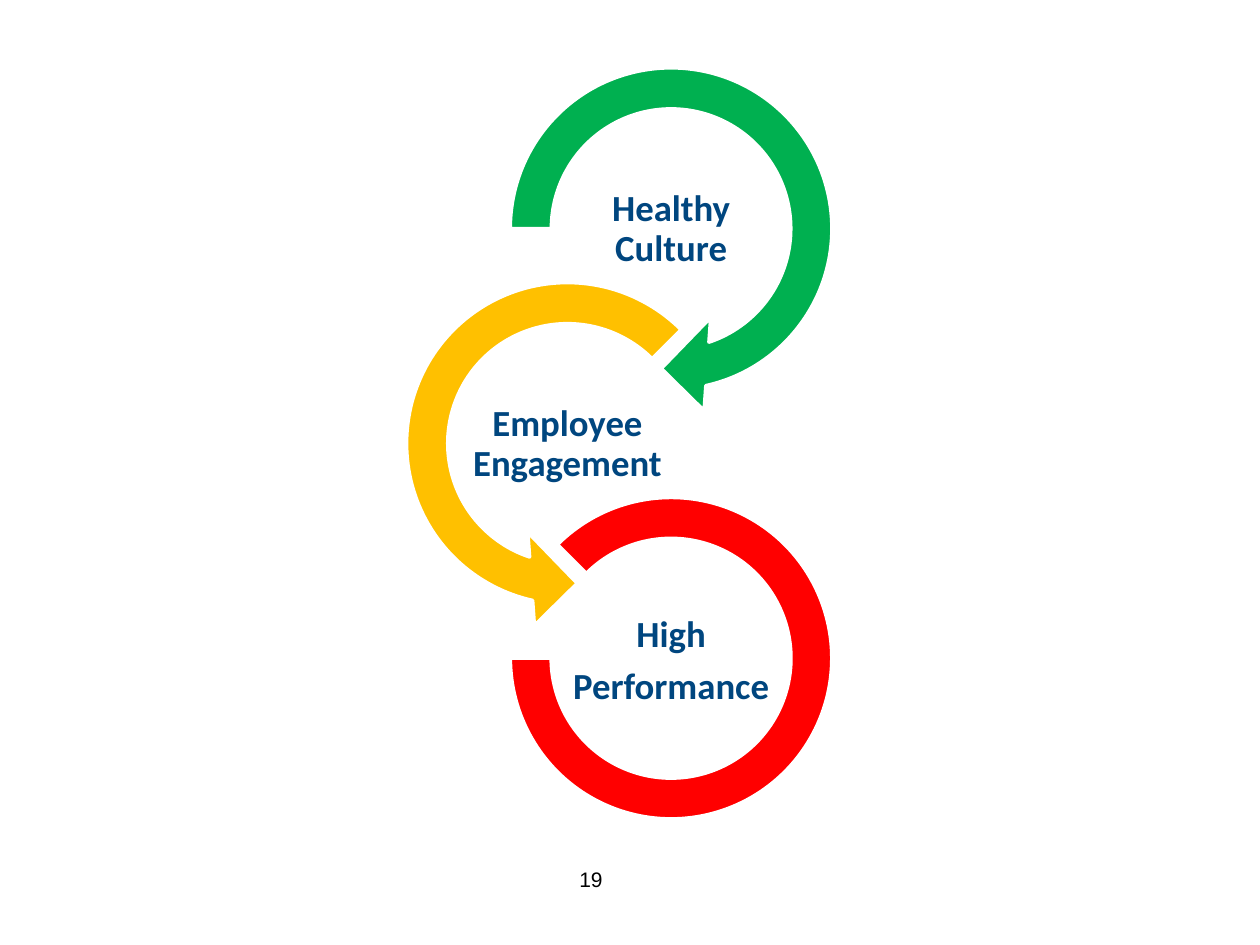
from pptx import Presentation
from pptx.dml.color import RGBColor
from pptx.enum.shapes import MSO_SHAPE
from pptx.enum.text import MSO_ANCHOR, PP_ALIGN
from pptx.util import Cm, Pt

RIGHT_ARROW = MSO_SHAPE.CIRCULAR_ARROW
LEFT_ARROW = MSO_SHAPE.LEFT_CIRCULAR_ARROW
ARC = MSO_SHAPE.BLOCK_ARC
MIDDLE = MSO_ANCHOR.MIDDLE
CENTER = PP_ALIGN.CENTER

GREEN = RGBColor(0x00, 0xB0, 0x50)
AMBER = RGBColor(0xFF, 0xC0, 0x00)
RED = RGBColor(0xFF, 0x00, 0x00)
NAVY = RGBColor(0x00, 0x46, 0x7F)
WHITE = RGBColor(0xFF, 0xFF, 0xFF)
BLACK = RGBColor(0x00, 0x00, 0x00)

ARROW_SIZE, ARC_SIZE = 7.54, 6.48
LABEL_WIDTH, LABEL_HEIGHT = 4.19, 2.08
STAGE_STEP = 4.33
STAGGER = 2.09

# preset, diameter, adjustments, colour, shift left, label drop, label paragraphs
STAGES = [
    (RIGHT_ARROW, ARROW_SIZE, (0.11, 11.42, 45, 108, 0.125), GREEN,
     0, 0.02, ["Healthy Culture"]),
    (LEFT_ARROW, ARROW_SIZE, (0.11, 11.42, 63, 189, 0.125), AMBER,
     STAGGER, 0.02, ["Employee Engagement"]),
    (ARC, ARC_SIZE, (135, 108, 0.127), RED,
     0, 0.06, ["High", "Performance"]),
]


def add_ring(slide, center_x, center_y, preset, size, adjustments, color):
    ring = slide.shapes.add_shape(
        preset, Cm(center_x - size / 2), Cm(center_y - size / 2), Cm(size), Cm(size))
    for index, value in enumerate(adjustments):
        ring.adjustments[index] = value
    ring.shadow.inherit = False
    ring.fill.solid()
    ring.fill.fore_color.rgb = color
    ring.line.color.rgb = WHITE
    ring.line.width = Pt(2)


def add_label(slide, center_x, center_y, lines):
    label = slide.shapes.add_textbox(
        Cm(center_x - LABEL_WIDTH / 2), Cm(center_y - LABEL_HEIGHT / 2),
        Cm(LABEL_WIDTH), Cm(LABEL_HEIGHT))
    frame = label.text_frame
    frame.word_wrap = True
    frame.vertical_anchor = MIDDLE
    frame.margin_left = frame.margin_right = Cm(0.03)
    frame.margin_top = frame.margin_bottom = Cm(0.03)
    for index, line in enumerate(lines):
        paragraph = frame.add_paragraph() if index else frame.paragraphs[0]
        paragraph.alignment = CENTER
        paragraph.line_spacing = 0.9
        paragraph.space_after = Pt(7)
        run = paragraph.add_run()
        run.text = line
        run.font.name = "Calibri"
        run.font.size = Pt(21)
        run.font.bold = True
        run.font.color.rgb = NAVY


def add_culture_chain(slide, center_x, first_center_y):
    """Stack the linked rings downwards from the centre of the first one."""
    for index, (preset, size, adjustments, color, shift, drop, lines) in enumerate(STAGES):
        x = center_x - shift
        y = first_center_y + index * STAGE_STEP
        add_ring(slide, x, y, preset, size, adjustments, color)
        add_label(slide, x, y + drop, lines)


def add_page_number(slide, left, top, width, height):
    box = slide.shapes.add_textbox(Cm(left), Cm(top), Cm(width), Cm(height))
    box.text_frame.word_wrap = True
    run = box.text_frame.paragraphs[0].add_run()
    run.text = "19"
    run.font.name = "Arial"
    run.font.size = Pt(12)
    run.font.color.rgb = BLACK


def main():
    presentation = Presentation()
    presentation.slide_width = Cm(25.4)
    presentation.slide_height = Cm(19.05)
    slide = presentation.slides.add_slide(presentation.slide_layouts[6])
    add_page_number(slide, 11.43, 17.35, 5.92, 0.69)
    add_culture_chain(slide, 13.53, 4.61)
    presentation.save("out.pptx")


if __name__ == "__main__":
    main()
